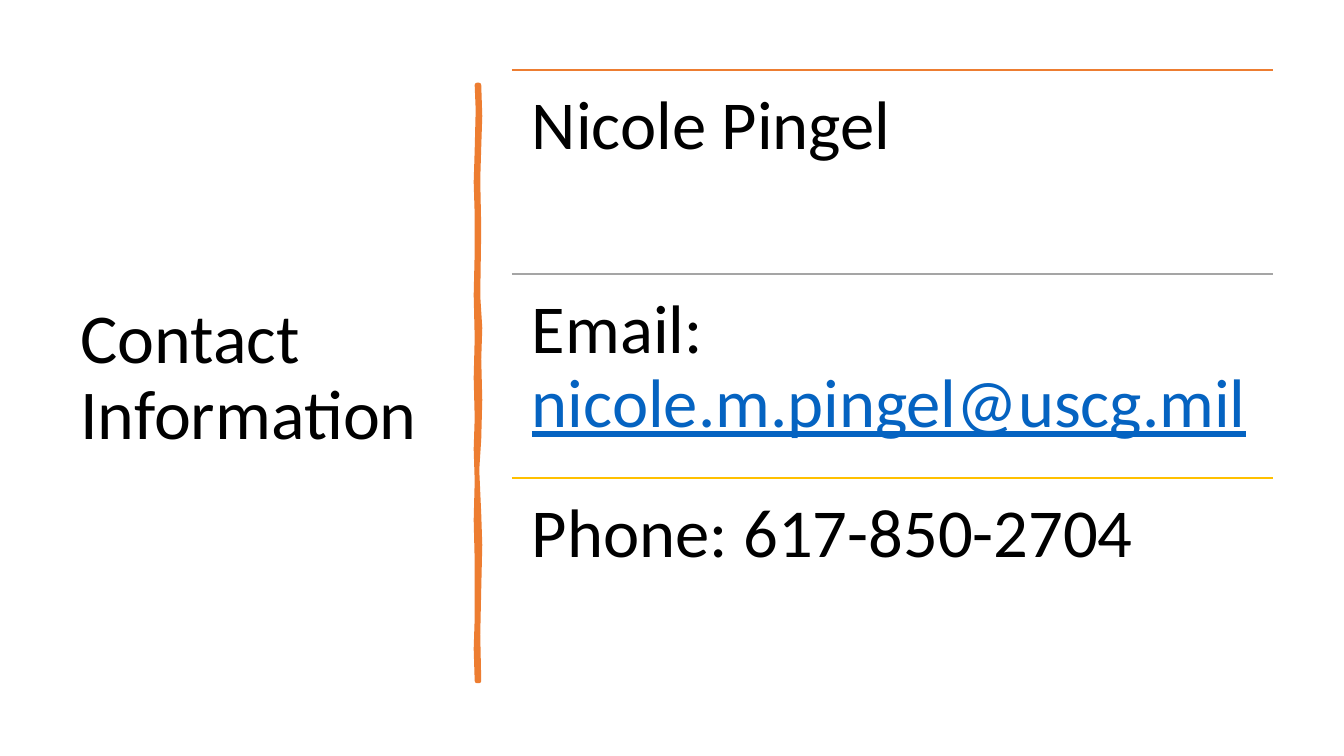
from lxml.etree import SubElement
from pptx import Presentation
from pptx.dml.color import RGBColor
from pptx.enum.shapes import MSO_CONNECTOR
from pptx.enum.text import MSO_ANCHOR, MSO_AUTO_SIZE, PP_ALIGN
from pptx.oxml.ns import qn
from pptx.util import Pt

PX = 9144000 / 1008
BLACK = RGBColor(0x00, 0x00, 0x00)
ORANGE = RGBColor(0xED, 0x7D, 0x31)
GREY = RGBColor(0xA5, 0xA5, 0xA5)
GOLD = RGBColor(0xFF, 0xC0, 0x00)
BLUE = RGBColor(0x05, 0x63, 0xC1)


def px(*vals):
    return [round(v * PX) for v in vals]


def write(para, text, size=49, color=BLACK, under=None):
    para.alignment = PP_ALIGN.LEFT
    para.line_spacing = 0.9
    run = para.add_run()
    run.text = text
    run.font.name = "Calibri"
    run.font.size = Pt(size)
    run.font.color.rgb = color
    run.font.underline = under


deck = Presentation()
deck.slide_width, deck.slide_height = px(1344, 756)
slide = deck.slides.add_slide(deck.slide_layouts[5])
shapes = slide.shapes

# Title
title = shapes.title
title.left, title.top, title.width, title.height = px(70, 71, 377, 616)
frame = title.text_frame
frame.word_wrap = True
frame.auto_size = MSO_AUTO_SIZE.NONE
frame.vertical_anchor = MSO_ANCHOR.MIDDLE
write(frame.paragraphs[0], "Contact Information", size=50)

# Hand-drawn divider: down the right edge, up the left edge
right = [(479, 85), (480, 116), (479, 147), (478, 180), (479, 228),
         (478, 296), (480, 328), (479, 359), (480, 400), (479, 439),
         (477, 470), (479, 514), (480, 545), (479, 589), (478, 635),
         (479, 681)]
left = [(477, 681), (476, 649), (477, 618), (477, 561), (476, 520),
        (477, 481), (476, 449), (477, 418), (476, 378), (477, 338),
        (476, 295), (477, 252), (477, 215), (476, 182), (477, 150),
        (478, 110), (477, 85)]
path = shapes.build_freeform(*right[0], scale=PX)
path.add_line_segments(right[1:] + left, close=True)
rule = path.convert_to_shape()
rule.shadow.inherit = False
rule.fill.solid()
rule.fill.fore_color.rgb = ORANGE
rule.line.color.rgb = ORANGE
rule.line.width = Pt(3.25)

# Contact rows, each under its own line
rows = [
    (ORANGE, [("Nicole Pingel", {})]),
    (GREY, [("Email: ", {}),
            ("nicole.m.pingel@uscg.mil", {"color": BLUE, "under": True})]),
    (GOLD, [("Phone: 617-850-2704", {})]),
]
X, TOP, WIDTH, STEP = 512, 70, 761, 204
for i, (color, runs) in enumerate(rows):
    y = TOP + i * STEP
    line = shapes.add_connector(MSO_CONNECTOR.STRAIGHT, *px(X, y, X + WIDTH, y))
    line.line.color.rgb = color
    line.line.width = Pt(1)
    SubElement(line._element.spPr, qn("a:effectLst"))

    frame = shapes.add_textbox(*px(X, y, WIDTH, STEP)).text_frame
    frame.word_wrap = True
    frame.margin_left, frame.margin_top = px(20, 20)
    frame.margin_right, frame.margin_bottom = px(20, 20)
    for text, form in runs:
        write(frame.paragraphs[0], text, **form)

deck.save("out.pptx")
